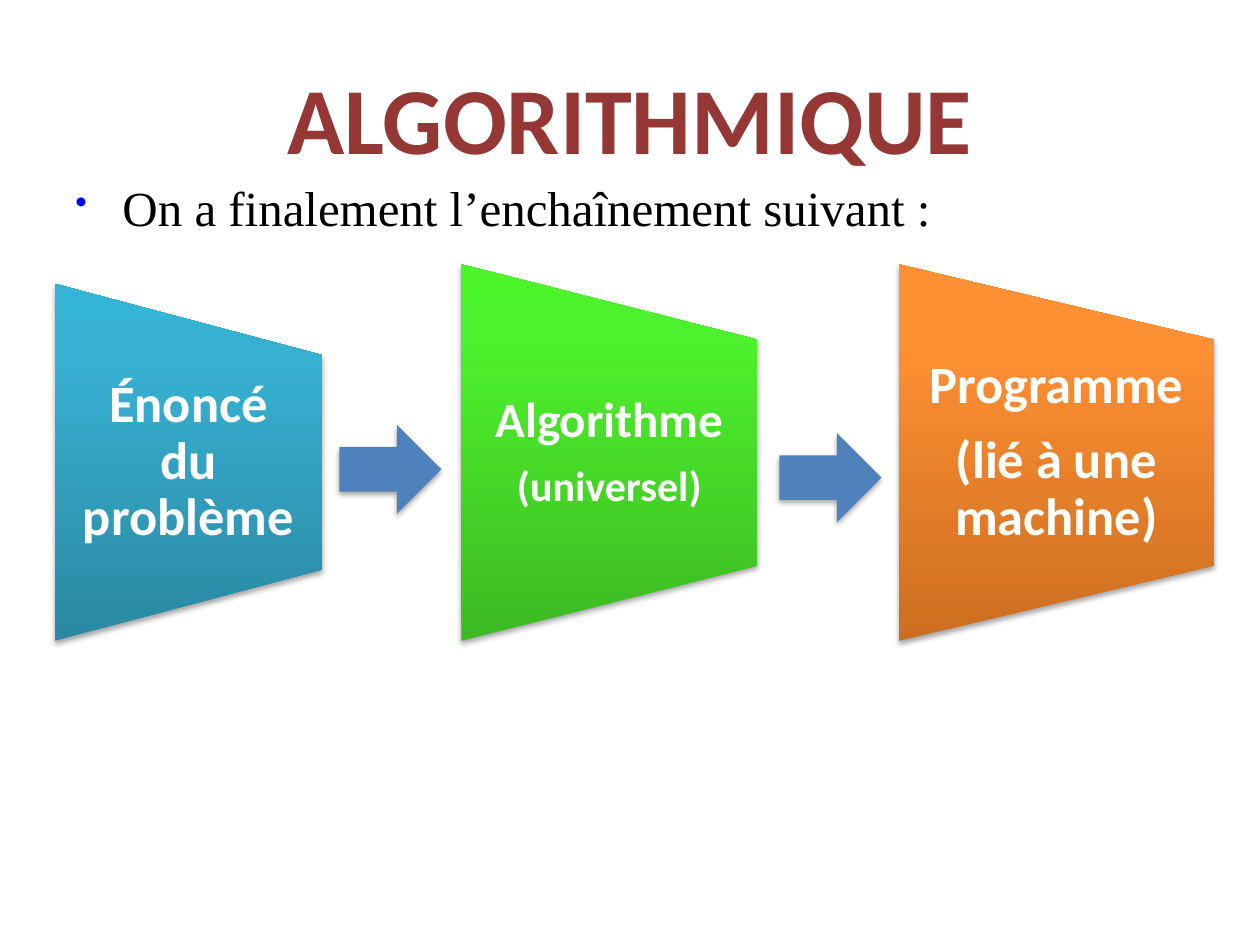
import pptx
import pptx.dml.color
import pptx.enum.shapes
import pptx.enum.text
import pptx.oxml
import pptx.oxml.ns
import pptx.util
from pptx.util import Cm

COLORS = {
    "title": "953735", "text": "000000", "bullet": "0000FF", "label": "FFFFFF",
    "arrow": "4F81BD", "shadow": "000000",
}
GRADIENTS = {
    "blue": ("2A88A2", "37B1D2", "34B4D6"),
    "green": ("3CB923", "4EF12D", "4CF52A"),
    "orange": ("CC6E20", "FF9034", "FF9136"),
}
NAMESPACE = pptx.oxml.ns.nsdecls("a")
ALIGN = pptx.enum.text.PP_ALIGN
ANCHOR = pptx.enum.text.MSO_ANCHOR


def write_text(paragraph, text, *, size, color, font="Calibri", bold=False,
               align=ALIGN.LEFT, line_spacing=None, space_after=None):
    """Add a formatted run to a paragraph."""
    paragraph.alignment = align
    if line_spacing is not None:
        paragraph.line_spacing = line_spacing
    if space_after is not None:
        paragraph.space_after = pptx.util.Pt(space_after)
    run = paragraph.add_run()
    run.text = text
    run.font.name = font
    run.font.size = pptx.util.Pt(size)
    run.font.bold = bold
    run.font.color.rgb = pptx.dml.color.RGBColor.from_string(color)


def add_text_frame(slide, box, anchor):
    """Add a wrapping text box and return its text frame."""
    frame = slide.shapes.add_textbox(*map(Cm, box)).text_frame
    frame.word_wrap = True
    frame.vertical_anchor = anchor
    return frame


def add_title(slide, box):
    """Place the centred heading."""
    frame = add_text_frame(slide, box, ANCHOR.MIDDLE)
    write_text(frame.paragraphs[0], "ALGORITHMIQUE", size=54, bold=True,
               color=COLORS["title"], align=ALIGN.CENTER)


def add_introduction(slide, box):
    """Place the bulleted sentence that introduces the chain."""
    paragraph = add_text_frame(slide, box, ANCHOR.TOP).paragraphs[0]
    properties = paragraph._p.get_or_add_pPr()
    properties.set("marL", str(Cm(0.95)))
    properties.set("indent", str(-Cm(0.95)))
    for markup in (
        f'<a:buClr {NAMESPACE}><a:srgbClr val="{COLORS["bullet"]}"/></a:buClr>',
        f'<a:buSzPct {NAMESPACE} val="70000"/>',
        f'<a:buChar {NAMESPACE} char="•"/>',
        f'<a:tabLst {NAMESPACE}><a:tab pos="{Cm(1.02)}" algn="l"/></a:tabLst>',
    ):
        properties.append(pptx.oxml.parse_xml(markup))
    write_text(paragraph, "On a finalement l’enchaînement suivant :", size=28,
               color=COLORS["text"], font="Times New Roman", line_spacing=0.75)


def add_shadow(shape):
    """Remove the outline and give the shape a soft shadow below it."""
    shape.line.fill.background()
    shape.shadow.inherit = False
    effects = shape._element.spPr.find(pptx.oxml.ns.qn("a:effectLst"))
    effects.append(pptx.oxml.parse_xml(
        f'<a:outerShdw {NAMESPACE} blurRad="40000" dist="23000" dir="5400000" '
        f'rotWithShape="0"><a:srgbClr val="{COLORS["shadow"]}">'
        '<a:alpha val="35000"/></a:srgbClr></a:outerShdw>'))


def fill_upwards(shape, colors):
    """Fill a shape with a three-stop gradient from bottom to top."""
    shape.fill.gradient()
    gradient = shape._element.spPr.find(pptx.oxml.ns.qn("a:gradFill"))
    stops = "".join(
        f'<a:gs pos="{position}"><a:srgbClr val="{color}"/></a:gs>'
        for position, color in zip((0, 80000, 100000), colors))
    gradient.getparent().replace(gradient, pptx.oxml.parse_xml(
        f'<a:gradFill {NAMESPACE} rotWithShape="1"><a:gsLst>{stops}</a:gsLst>'
        '<a:lin ang="16200000" scaled="0"/></a:gradFill>'))


def add_step(slide, box, gradient, lines):
    """Place one tapering step with its centred lines of text."""
    left, top, width, height = box
    right, bottom, taper = left + width, top + height, height / 5
    builder = slide.shapes.build_freeform(Cm(left), Cm(bottom))
    corners = ((left, top), (right, top + taper), (right, bottom - taper))
    builder.add_line_segments([(Cm(x), Cm(y)) for x, y in corners], close=True)
    shape = builder.convert_to_shape()
    fill_upwards(shape, GRADIENTS[gradient])
    add_shadow(shape)
    frame = shape.text_frame
    frame.word_wrap = True
    frame.vertical_anchor = ANCHOR.MIDDLE
    frame.margin_left = frame.margin_right = Cm(0.53)
    frame.margin_top = frame.margin_bottom = Cm(1.73)
    for index, (text, size) in enumerate(lines):
        paragraph = frame.add_paragraph() if index else frame.paragraphs[0]
        write_text(paragraph, text, size=size, bold=True, color=COLORS["label"],
                   align=ALIGN.CENTER, line_spacing=0.9, space_after=0.35 * size)


def add_arrow(slide, box):
    """Place an arrow that leads to the next step."""
    shape = slide.shapes.add_shape(
        pptx.enum.shapes.MSO_SHAPE.RIGHT_ARROW, *map(Cm, box))
    shape.fill.solid()
    shape.fill.fore_color.rgb = pptx.dml.color.RGBColor.from_string(COLORS["arrow"])
    add_shadow(shape)


def add_chain(slide, box):
    """Place the three steps on a common base, and the arrows between them."""
    left, top, _, height = box
    steps = (
        (0, 5.4, 7.2, "blue", [("Énoncé du problème", 30)]),
        (8.2, 5.97, height, "green", [("Algorithme", 28), ("(universel)", 24)]),
        (17.02, 6.35, height, "orange",
         [("Programme", 30), ("(lié à une machine)", 30)]),
    )
    for offset, width, step_height, gradient, lines in steps:
        step_box = (left + offset, top + height - step_height, width, step_height)
        add_step(slide, step_box, gradient, lines)
    for offset_x, offset_y in ((5.74, 3.23), (14.61, 3.4)):
        add_arrow(slide, (left + offset_x, top + offset_y, 2.06, 1.8))


def main():
    """Build the slide and save it."""
    presentation = pptx.Presentation()
    presentation.slide_width = Cm(25.4)
    presentation.slide_height = Cm(19.05)
    slide = presentation.slides.add_slide(presentation.slide_layouts[6])
    add_title(slide, (1.27, 0.76, 22.86, 3.18))
    add_introduction(slide, (1.27, 3.73, 22.86, 1.4))
    add_chain(slide, (1.1, 5.33, 23.37, 7.59))
    presentation.save("out.pptx")


if __name__ == "__main__":
    main()
